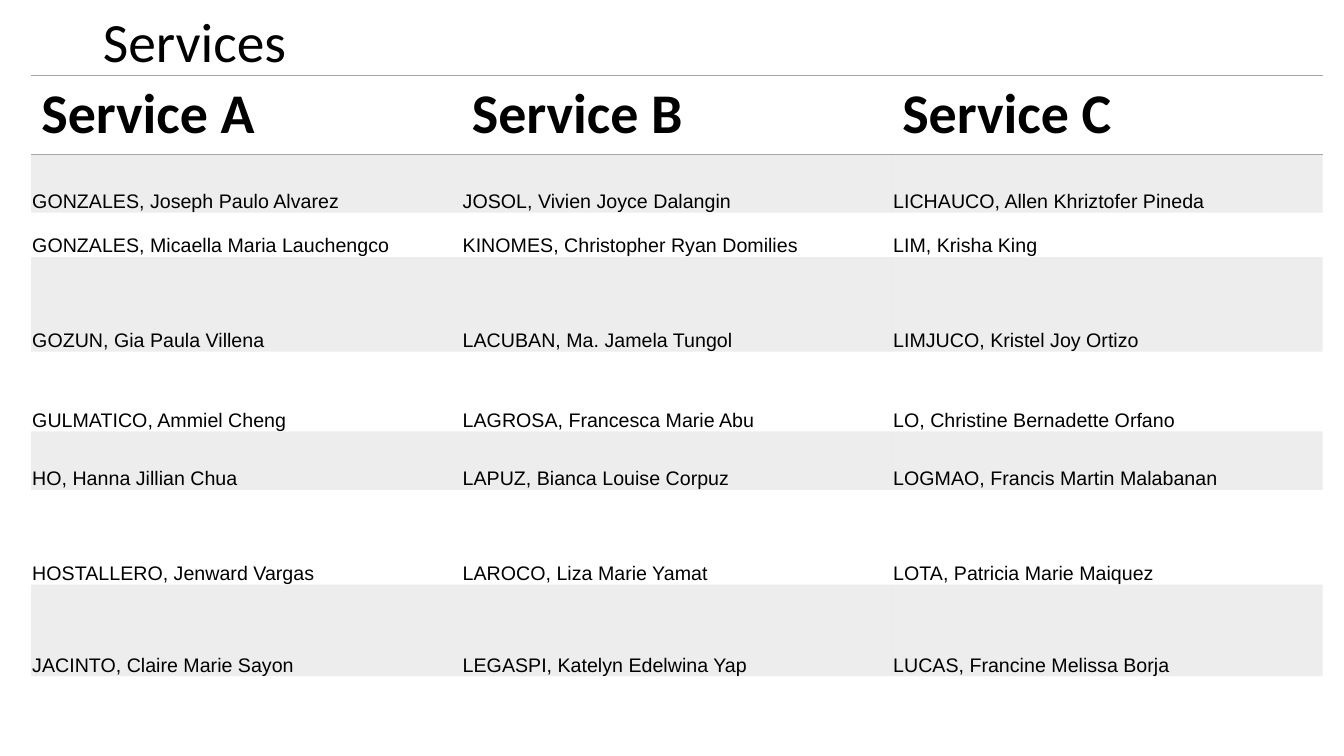
from pptx import Presentation
from pptx.dml.color import RGBColor
from pptx.enum.text import MSO_ANCHOR as ANCHOR, MSO_AUTO_SIZE as AUTO_SIZE, PP_ALIGN as ALIGN
from pptx.oxml import parse_xml
from pptx.oxml.ns import nsdecls, qn
from pptx.util import Inches, Pt

BLACK = RGBColor(0x00, 0x00, 0x00)
GRAY = RGBColor(0xA5, 0xA5, 0xA5)
NO_STYLE = "{2D5ABB26-0587-4C30-8999-92F81FD0307C}"

COL_WIDTH = 4.27
ROW_HEIGHTS = [0.78, 0.58, 0.44, 0.94, 0.79, 0.58, 0.94, 0.91, 0.66]
HEADERS = ["Service A", "Service B", "Service C"]
MEMBERS = [
    ["GONZALES, Joseph Paulo Alvarez", "JOSOL, Vivien Joyce Dalangin",
     "LICHAUCO, Allen Khriztofer Pineda"],
    ["GONZALES, Micaella Maria Lauchengco", "KINOMES, Christopher Ryan Domilies",
     "LIM, Krisha King"],
    ["GOZUN, Gia Paula Villena", "LACUBAN, Ma. Jamela Tungol",
     "LIMJUCO, Kristel Joy Ortizo"],
    ["GULMATICO, Ammiel Cheng", "LAGROSA, Francesca Marie Abu",
     "LO, Christine Bernadette Orfano"],
    ["HO, Hanna Jillian Chua", "LAPUZ, Bianca Louise Corpuz",
     "LOGMAO, Francis Martin Malabanan"],
    ["HOSTALLERO, Jenward Vargas", "LAROCO, Liza Marie Yamat",
     "LOTA, Patricia Marie Maiquez"],
    ["JACINTO, Claire Marie Sayon", "LEGASPI, Katelyn Edelwina Yap",
     "LUCAS, Francine Melissa Borja"],
]


def format_text(p, font, size, bold=False):
    p.alignment = ALIGN.LEFT
    for r in p.runs:
        r.font.name = font
        r.font.size = Pt(size)
        r.font.bold = bold
        r.font.color.rgb = BLACK


def add_title(s, text):
    title = s.shapes.title
    title.left, title.top = Inches(0.92), Inches(0.12)
    title.width, title.height = Inches(11.5), Inches(0.64)
    tf = title.text_frame
    tf.text = text
    tf.auto_size = AUTO_SIZE.NONE
    tf.vertical_anchor = ANCHOR.MIDDLE
    p = tf.paragraphs[0]
    p.line_spacing = 0.9
    format_text(p, "Calibri", 39.6)


def add_rules(cell):
    """Draw the top and bottom border of a cell."""
    tc_pr = cell._tc.get_or_add_tcPr()
    for i, side in enumerate(("lnT", "lnB")):
        tc_pr.insert(i, parse_xml(
            f'<a:{side} {nsdecls("a")} w="{Pt(1)}"><a:solidFill>'
            f'<a:srgbClr val="{GRAY}"/></a:solidFill></a:{side}>'))


def shade(cell):
    """Fill a cell with gray at 20 % opacity."""
    cell.fill.solid()
    cell.fill.fore_color.rgb = GRAY
    color = cell._tc.tcPr.find(".//" + qn("a:srgbClr"))
    color.append(parse_xml(f'<a:alpha {nsdecls("a")} val="20000"/>'))


def fill_header(cell, text):
    cell.text = text
    cell.fill.background()
    format_text(cell.text_frame.paragraphs[0], "Calibri", 40, bold=True)
    add_rules(cell)


def fill_member(cell, text, shaded):
    cell.text = text
    cell.vertical_anchor = ANCHOR.BOTTOM
    cell.margin_left = cell.margin_right = cell.margin_top = Inches(0.01)
    cell.margin_bottom = 0
    format_text(cell.text_frame.paragraphs[0], "Arial", 14)
    if shaded:
        shade(cell)
    else:
        cell.fill.background()


def add_services_table(s):
    frame = s.shapes.add_table(
        len(ROW_HEIGHTS), len(HEADERS), Inches(0.31), Inches(0.75),
        Inches(COL_WIDTH * len(HEADERS)), Inches(sum(ROW_HEIGHTS)))
    table = frame.table
    table.first_row = table.horz_banding = False
    table._tbl.tblPr.find(qn("a:tableStyleId")).text = NO_STYLE
    for column in table.columns:
        column.width = Inches(COL_WIDTH)
    for row, height in zip(table.rows, ROW_HEIGHTS):
        row.height = Inches(height)

    # Header row
    for col, text in enumerate(HEADERS):
        fill_header(table.cell(0, col), text)

    # Member rows, every other one shaded
    for row, names in enumerate(MEMBERS, start=1):
        for col, name in enumerate(names):
            fill_member(table.cell(row, col), name, shaded=row % 2 == 1)

    # Empty closing row
    for cell in table.rows[len(ROW_HEIGHTS) - 1].cells:
        cell.fill.background()


def main():
    prs = Presentation()
    prs.slide_width, prs.slide_height = Inches(13.33), Inches(7.5)
    s = prs.slides.add_slide(prs.slide_layouts[5])
    add_title(s, "Services")
    add_services_table(s)
    prs.save("out.pptx")


if __name__ == "__main__":
    main()
